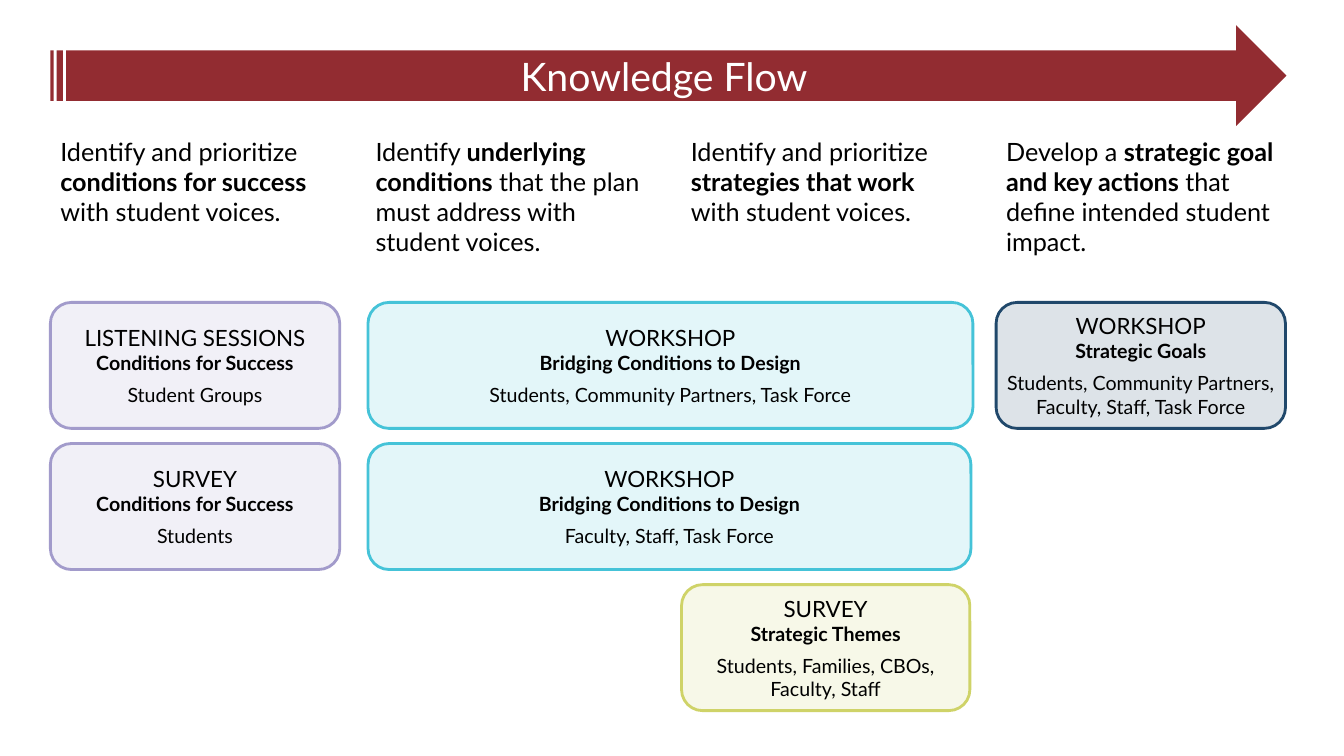
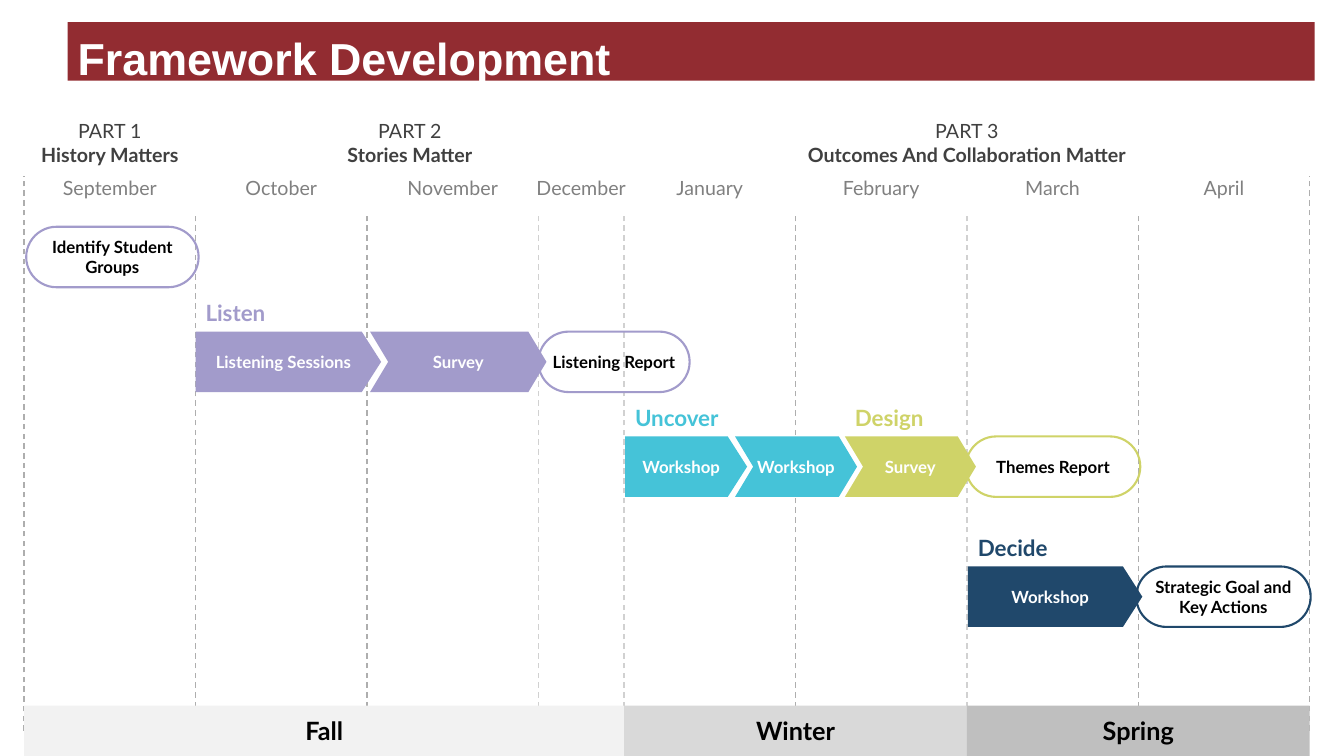
from itertools import accumulate, pairwise
from lxml.etree import SubElement
from pptx import Presentation
from pptx.dml.color import RGBColor
from pptx.enum.dml import MSO_LINE
from pptx.enum.shapes import MSO_CONNECTOR, MSO_SHAPE
from pptx.enum.text import MSO_ANCHOR, MSO_AUTO_SIZE, PP_ALIGN
from pptx.oxml.ns import qn
from pptx.util import Inches, Pt

RED, PURPLE, TEAL = "922C31", "A29BCB", "45C3D8"
LIME, NAVY = "CFD368", "20486B"
BLACK, WHITE, DARK, GREY = "000000", "FFFFFF", "404040", "808080"
DASH, PALE_DASH = "AEAEAE", "D1D1D1"
ROW_H = 0.6


def rgb(color):
    return RGBColor.from_string(color)


def write(sp, paras, size=14, color=BLACK, bold=False, font="Lato",
          align=PP_ALIGN.CENTER, anchor=MSO_ANCHOR.MIDDLE, inset=(0.1, 0.05), after=0):
    tf = sp.text_frame
    tf.word_wrap = True
    tf.auto_size = MSO_AUTO_SIZE.NONE
    tf.vertical_anchor = anchor
    tf.margin_left = tf.margin_right = Inches(inset[0])
    tf.margin_top = tf.margin_bottom = Inches(inset[1])
    for i, runs in enumerate([paras] if isinstance(paras, str) else paras):
        p = tf.paragraphs[0] if i == 0 else tf.add_paragraph()
        p.alignment = align
        p.space_after = Pt(after)
        for run in [runs] if isinstance(runs, str) else runs:
            text, own = (run, {}) if isinstance(run, str) else run
            if text == "\n":
                p.add_line_break()
                continue
            r = p.add_run()
            r.text = text
            r.font.name = font
            r.font.size = Pt(own.get("size", size))
            r.font.bold = own.get("bold", bold)
            r.font.color.rgb = rgb(color)
    return sp


def add_shape(shapes, kind, box, fill=None, line=None, width=1.5, adj=None, alpha=None):
    sp = shapes.add_shape(kind, *map(Inches, box))
    sp.shadow.inherit = False
    if adj is not None:
        sp.adjustments[0] = adj
    if fill:
        sp.fill.solid()
        sp.fill.fore_color.rgb = rgb(fill)
        if alpha:
            clr = sp.fill._xPr.find(qn("a:solidFill"))[0]
            SubElement(clr, qn("a:alpha")).set("val", str(alpha * 1000))
    else:
        sp.fill.background()
    if line:
        sp.line.color.rgb = rgb(line)
        sp.line.width = Pt(width)
    else:
        sp.line.fill.background()
    return sp


def add_label(shapes, box, paras, **fmt):
    return write(shapes.add_textbox(*map(Inches, box)), paras, **fmt)


def add_dash(shapes, x, top, bottom, color):
    line = shapes.add_connector(MSO_CONNECTOR.STRAIGHT, *map(Inches, (x, bottom, x, top)))
    line.line.color.rgb = rgb(color)
    line.line.width = Pt(1)
    line.line.dash_style = MSO_LINE.DASH
    SubElement(line._element.spPr, qn("a:effectLst"))


def add_title(s, box, text, fill=None, **fmt):
    title = s.shapes.title
    title.left, title.top, title.width, title.height = map(Inches, box)
    if fill:
        title.fill.solid()
        title.fill.fore_color.rgb = rgb(fill)
    write(title, text, color=WHITE, **fmt)


def new_slide(prs):
    return prs.slides.add_slide(prs.slide_layouts[5])


def flow_header(s, box):
    x, y, w, h = box
    arrow = add_shape(s.shapes, MSO_SHAPE.STRIPED_RIGHT_ARROW, box, RED)
    s.shapes._spTree.remove(arrow._element)
    s.shapes._spTree.insert(2, arrow._element)
    add_title(s, (x + 0.16, y + h / 4, w - 0.41, h / 2), "Knowledge Flow", size=28)


def flow_goals(s, box, goals):
    x, y, w, h = box
    col_w = 2.87
    pitch = (w - col_w) / (len(goals) - 1)
    for i, (before, strong, after) in enumerate(goals):
        add_label(s.shapes, (x + i * pitch, y, col_w, h),
                  [[before, (strong, {"bold": True}), after]],
                  size=18, align=PP_ALIGN.LEFT, anchor=MSO_ANCHOR.TOP)


def flow_cards(s, x, y, cards):
    for dx, row, w, color, kind, topic, people, side in cards:
        sp = add_shape(s.shapes, MSO_SHAPE.ROUNDED_RECTANGLE,
                       (x + dx, y + row * 1.4, w, 1.25), color, color, 2, alpha=15)
        head = [(kind, {"size": 16}), "\n", (topic, {"bold": True})]
        write(sp, [head, people], after=6, inset=(side, 0.05))


def flow_slide(prs):
    s = new_slide(prs)
    flow_header(s, (0.5, 0.25, 12.26, 1))
    flow_goals(s, (0.5, 1.3, 12.25, 1.31), [
        ("Identify and prioritize ", "conditions for success", " with student voices."),
        ("Identify ", "underlying conditions ",
         "that the plan must address with student voices."),
        ("Identify and prioritize ", "strategies that work", " with student voices."),
        ("Develop a ", "strategic goal and key actions ",
         "that define intended student impact."),
    ])
    bridging = "Bridging Conditions to Design"
    flow_cards(s, 0.5, 3, [
        (0, 0, 2.87, PURPLE, "LISTENING SESSIONS", "Conditions for Success",
         "Student Groups", 0.1),
        (0, 1, 2.87, PURPLE, "SURVEY", "Conditions for Success", "Students", 0.1),
        (3.15, 0, 6, TEAL, "WORKSHOP", bridging,
         "Students, Community Partners, Task Force", 0.1),
        (3.15, 1, 5.98, TEAL, "WORKSHOP", bridging, "Faculty, Staff, Task Force", 0.1),
        (6.26, 2, 2.86, LIME, "SURVEY", "Strategic Themes",
         "Students, Families, CBOs, Faculty, Staff", 0.1),
        (9.38, 0, 2.87, NAVY, "WORKSHOP", "Strategic Goals",
         "Students, Community Partners, Faculty, Staff, Task Force", 0),
    ])


def calendar(s, box, months, parts, seasons):
    x, y, w, h = box
    unit = w / sum(share for _, share in months)
    edges = [x + unit * n for n in accumulate((share for _, share in months), initial=0)]
    last = len(edges) - 1
    for i, edge in enumerate(edges):
        if i in (0, last):
            add_dash(s.shapes, edge, y + 0.5, y + h - 0.25, DASH)
        else:
            color = PALE_DASH if i in (3, 4, 6) else DASH
            add_dash(s.shapes, edge, y + 0.85, y + h, color)
    for text, first, end in parts:
        sp = add_shape(s.shapes, MSO_SHAPE.RECTANGLE,
                       (edges[first], y, edges[end] - edges[first], 0.33), WHITE)
        write(sp, [["PART " + text[0]], [(text[1], {"bold": True})]], color=DARK)
    for (name, _), (left, right) in zip(months, pairwise(edges)):
        col_w = max(right - left, 1.1)
        add_label(s.shapes, ((left + right - col_w) / 2, y + 0.45, col_w, 0.34),
                  name, color=GREY, anchor=MSO_ANCHOR.TOP)
    for name, first, end, color in seasons:
        sp = add_shape(s.shapes, MSO_SHAPE.RECTANGLE,
                       (edges[first], y + h - 0.5, edges[end] - edges[first], 0.5), color)
        write(sp, name, size=18, bold=True)


def pill(shapes, x, y, w, text, color):
    sp = add_shape(shapes, MSO_SHAPE.ROUNDED_RECTANGLE, (x, y, w, ROW_H),
                   line=color, adj=0.5)
    write(sp, text, size=12, bold=True, inset=(0, 0))


def phase(s, x, y, labels, steps, report):
    shapes = s.shapes.add_group_shape().shapes
    for dx, text, color in labels:
        add_label(shapes, (x + dx, y, 1.2, 0.37), text, size=16, bold=True, color=color,
                  align=PP_ALIGN.LEFT, anchor=MSO_ANCHOR.TOP)
    row = y + 0.37
    dx, w, text, color = report
    pill(shapes, x + dx, row, w, text, color)
    for i, (dx, w, text, color) in enumerate(steps):
        kind = MSO_SHAPE.CHEVRON if i else MSO_SHAPE.PENTAGON
        sp = add_shape(shapes, kind, (x + dx, row, w, ROW_H), color,
                       adj=0.3 if i else 0.32)
        write(sp, text, size=12, bold=True, color=WHITE, inset=(0, 0.05))


def timeline_slide(prs):
    s = new_slide(prs)
    add_title(s, (0.67, 0.22, 12.37, 0.58), "Framework Development", RED, size=32,
              bold=True, font="Arial", align=PP_ALIGN.LEFT, anchor=MSO_ANCHOR.TOP,
              inset=(0.1, 0.08))
    calendar(
        s, (0.24, 1.25, 12.75, 6.25),
        [("September", 1), ("October", 1), ("November", 1), ("December", 0.5),
         ("January", 1), ("February", 1), ("March", 1), ("April", 1)],
        [(("1", "History Matters"), 0, 1), (("2", "Stories Matter"), 1, 4),
         (("3", "Outcomes And Collaboration Matter"), 4, 8)],
        [("Fall", 0, 4, "F2F2F2"), ("Winter", 4, 6, "D9D9D9"),
         ("Spring", 6, 8, "BFBFBF")])
    pill(s.shapes, 0.26, 2.25, 1.71, "Identify Student Groups", PURPLE)
    phase(s, 1.94, 2.92, [(0, "Listen", PURPLE)],
          [(0, 1.84, "Listening Sessions", PURPLE), (1.73, 1.75, "Survey", PURPLE)],
          (3.4, 1.5, "Listening Report", PURPLE))
    phase(s, 6.2, 3.96, [(0, "Uncover", TEAL), (2.18, "Design", LIME)],
          [(0, 1.21, "Workshop", TEAL), (1.09, 1.21, "Workshop", TEAL),
           (2.18, 1.3, "Survey", LIME)],
          (3.38, 1.73, "Themes Report", LIME))
    phase(s, 9.6, 5.25, [(0, "Decide", NAVY)], [(0, 1.73, "Workshop", NAVY)],
          (1.67, 1.73, "Strategic Goal and Key Actions", NAVY))


def main():
    prs = Presentation()
    prs.slide_width, prs.slide_height = Inches(13.33), Inches(7.5)
    flow_slide(prs)
    timeline_slide(prs)
    prs.save("out.pptx")


if __name__ == "__main__":
    main()
